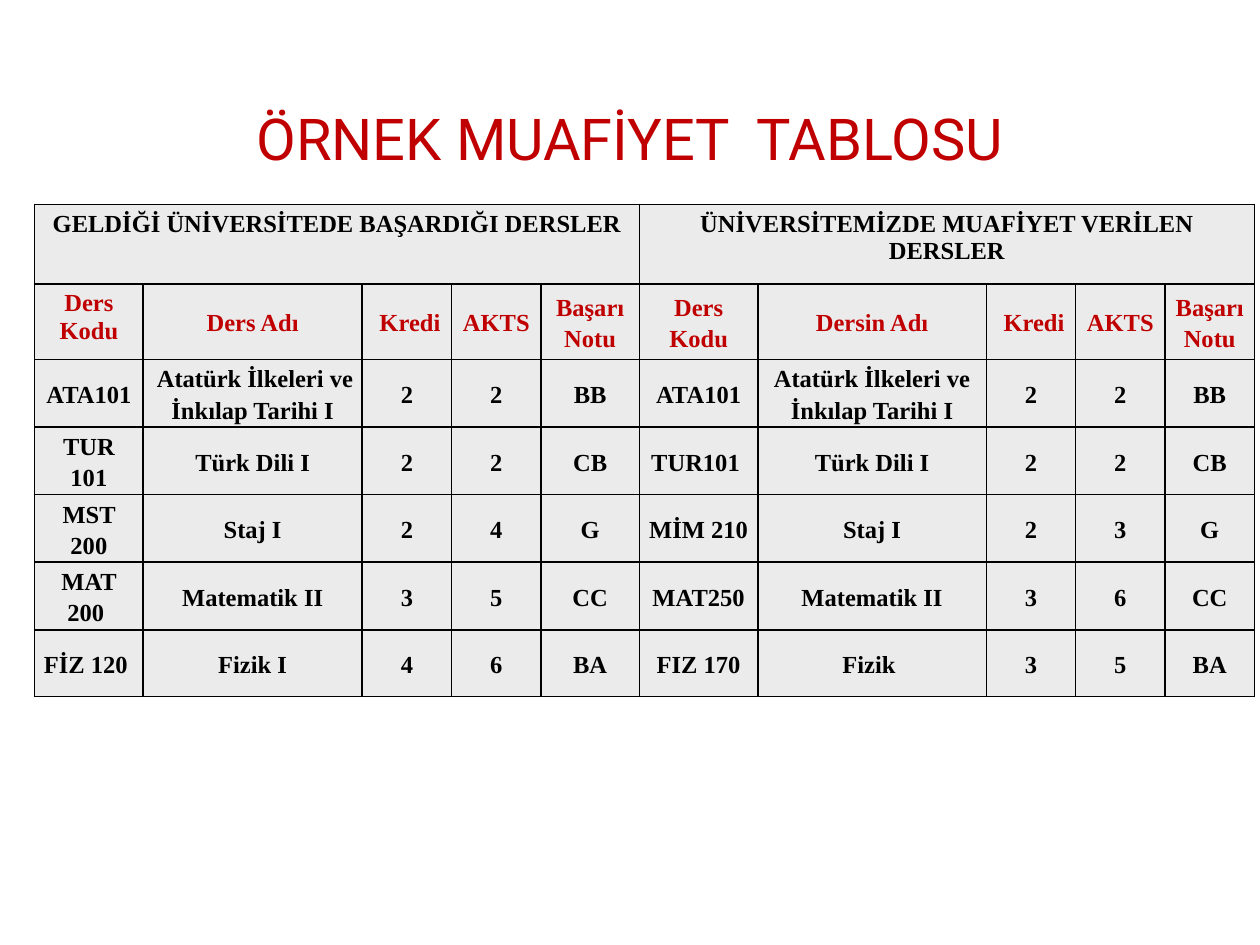
from dataclasses import dataclass

from pptx import Presentation
from pptx import util as u
from pptx.dml import color
from pptx.enum import text
from pptx.oxml import parse_xml
from pptx.oxml import ns


@dataclass(frozen=True)
class Theme:
    """Colours, fonts and type sizes of the slide."""
    red: str = "C00000"
    black: str = "000000"
    cell: str = "EBEBEB"
    title_font: str = "Roboto"
    table_font: str = "Times New Roman"
    title_size: float = 33
    table_size: float = 14
    border: float = 1


THEME = Theme()
COLUMNS = [62, 125.2, 51.1, 51.1, 56.2, 67.8, 130.5, 51.1, 51.1, 51.1]
ROWS = [45.4, 43.2, 35.4, 35.4, 35.4, 35.4, 38.2]
HALF = len(COLUMNS) // 2
GROUPS = ["GELDİĞİ ÜNİVERSİTEDE BAŞARDIĞI DERSLER",
          "ÜNİVERSİTEMİZDE MUAFİYET VERİLEN DERSLER"]
HEADINGS = ["Ders Kodu", "Ders Adı", " Kredi", "AKTS ", "Başarı Notu",
            "Ders Kodu", "Dersin Adı", " Kredi", "AKTS", "Başarı Notu"]
COURSES = [
    ["ATA101", " Atatürk İlkeleri ve İnkılap Tarihi I", "2", "2", "BB",
     "ATA101", "Atatürk İlkeleri ve İnkılap Tarihi I", "2", "2", "BB"],
    ["TUR 101", "Türk Dili I", "2", "2", "CB",
     "TUR101 ", "Türk Dili I", "2", "2", "CB"],
    ["MST 200", "Staj I", "2", "4", "G",
     "MİM 210", "Staj I", "2", "3", "G"],
    ["MAT 200 ", "Matematik II", "3", "5", "CC",
     "MAT250", "Matematik II", "3", "6", "CC"],
    ["FİZ 120 ", "Fizik I", "4", "6", "BA",
     "FIZ 170", "Fizik ", "3", "5", "BA"],
]
MIDDLE = {"vertical_anchor": text.MSO_ANCHOR.MIDDLE}
COMPACT = {**MIDDLE, "margin_left": u.Pt(5), "margin_right": u.Pt(5),
           "margin_top": u.Pt(0), "margin_bottom": u.Pt(0)}


def apply(target, values):
    """Set each attribute named in values on target."""
    for name, value in values.items():
        setattr(target, name, value)


def write(frame, wording, spacing, colour, font):
    """Write one centred paragraph into a text frame."""
    paragraph = frame.paragraphs[0]
    apply(paragraph, {"alignment": text.PP_ALIGN.CENTER, "line_spacing": spacing})
    run = paragraph.add_run()
    run.text = wording
    apply(run.font, font)
    run.font.color.rgb = color.RGBColor.from_string(colour)


def add_title(slide, wording):
    """Add the slide heading."""
    heading = slide.shapes.add_textbox(u.Pt(49.5), u.Pt(29), u.Pt(621), u.Pt(104))
    apply(heading.text_frame, {"word_wrap": True, **MIDDLE})
    write(heading.text_frame, wording, 0.9, THEME.red,
          {"name": THEME.title_font, "size": u.Pt(THEME.title_size)})


def style_cell(cell):
    """Give a cell its four borders and its fill."""
    properties = cell._tc.get_or_add_tcPr()
    for side in "LRTB":
        properties.append(parse_xml(
            f'<a:ln{side} {ns.nsdecls("a")} w="{u.Pt(THEME.border)}"><a:solidFill>'
            f'<a:srgbClr val="{THEME.black}"/></a:solidFill></a:ln{side}>'))
    cell.fill.solid()
    cell.fill.fore_color.rgb = color.RGBColor.from_string(THEME.cell)


def fill_cell(cell, wording, colour, compact=True):
    """Write a cell's wording, either compact and centred or at the top."""
    if compact:
        apply(cell, COMPACT)
    write(cell.text_frame, wording, 1.15 if compact else None, colour,
          {"name": THEME.table_font, "size": u.Pt(THEME.table_size), "bold": True})


def add_exemptions(slide):
    """Add the table that pairs passed courses with exempted ones."""
    table = slide.shapes.add_table(len(ROWS), len(COLUMNS), u.Pt(19.8), u.Pt(116.8),
                                   u.Pt(sum(COLUMNS)), u.Pt(sum(ROWS))).table
    apply(table, {"first_row": False, "horz_banding": False})
    for column, width in zip(table.columns, COLUMNS):
        column.width = u.Pt(width)
    for row, height in zip(table.rows, ROWS):
        row.height = u.Pt(height)
    for cell in table.iter_cells():
        style_cell(cell)
    for index, group in enumerate(GROUPS):
        first = index * HALF
        table.cell(0, first).merge(table.cell(0, first + HALF - 1))
        fill_cell(table.cell(0, first), group, THEME.black, compact=False)
    for c, heading in enumerate(HEADINGS):
        fill_cell(table.cell(1, c), heading, THEME.red, compact=c > 0)
    for r, course in enumerate(COURSES, start=2):
        for c, entry in enumerate(course):
            fill_cell(table.cell(r, c), entry, THEME.black)


def main():
    """Build and save the slide."""
    deck = Presentation()
    apply(deck, {"slide_width": u.Pt(720), "slide_height": u.Pt(540)})
    slide = deck.slides.add_slide(deck.slide_layouts[6])
    add_title(slide, "ÖRNEK MUAFİYET  TABLOSU")
    add_exemptions(slide)
    deck.save("out.pptx")


if __name__ == "__main__":
    main()
